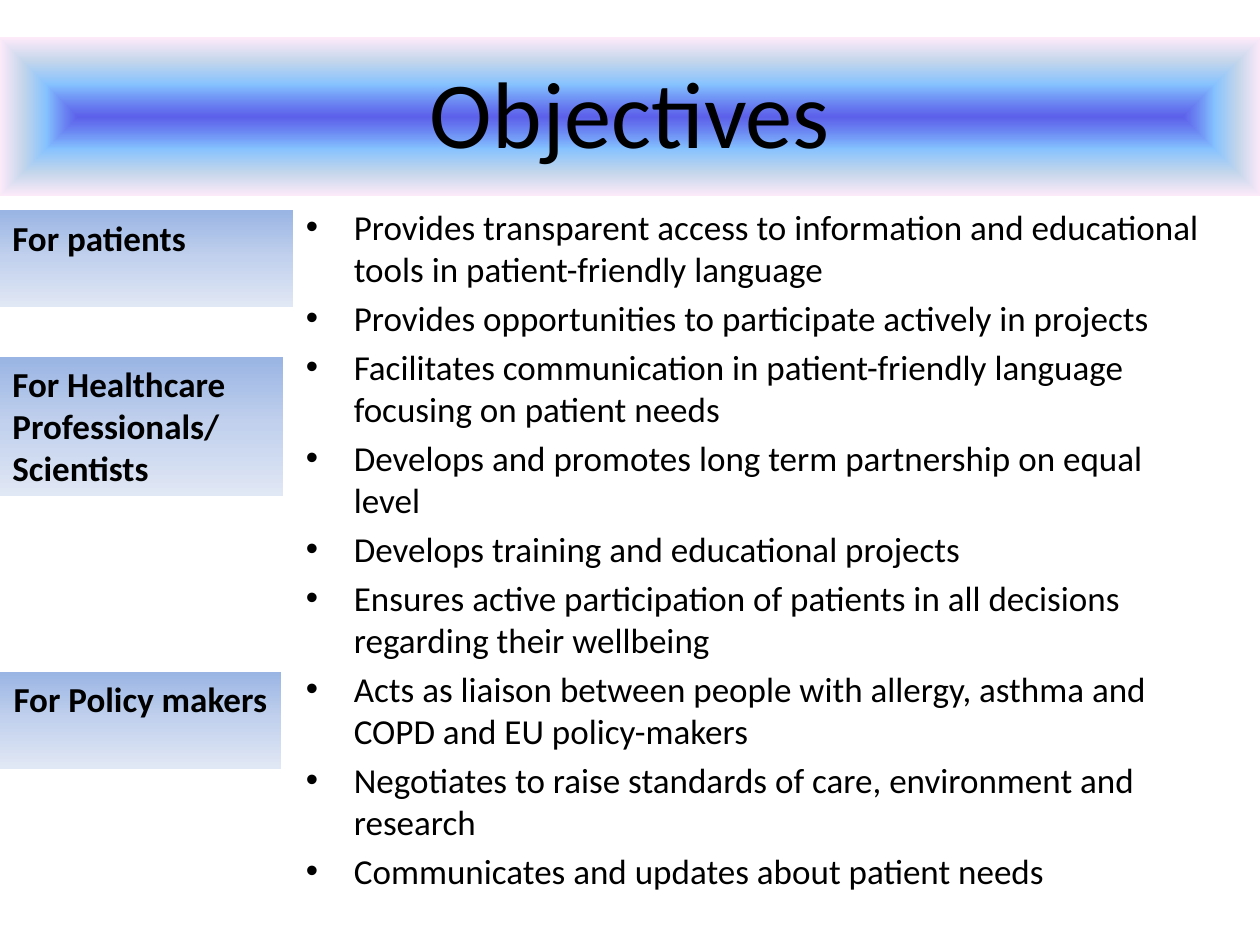
from dataclasses import dataclass

from lxml.etree import SubElement
from pptx import Presentation
from pptx.dml.color import RGBColor
from pptx.enum.shapes import MSO_SHAPE
from pptx.enum.text import MSO_ANCHOR, PP_ALIGN
from pptx.oxml.ns import qn
from pptx.util import Inches, Length, Pt

FONT = "Calibri"
BLACK = RGBColor(0x00, 0x00, 0x00)
INDIGO = RGBColor(0x43, 0x47, 0xE7)
SKY = RGBColor(0x85, 0xC2, 0xFF)
MIST = RGBColor(0xC4, 0xD6, 0xEB)
BLUSH = RGBColor(0xFF, 0xEB, 0xFA)
STEEL = RGBColor(0x9A, 0xB5, 0xE4)
PALE_STEEL = RGBColor(0xC2, 0xD1, 0xED)
ICE = RGBColor(0xE1, 0xE8, 0xF5)


@dataclass(frozen=True)
class Stop:
    percent: int
    color: RGBColor
    opacity: int = 100


@dataclass(frozen=True)
class Audience:
    lines: tuple[str, ...]
    top: float
    width: float
    height: float
    wrap: bool = True
    align: PP_ALIGN = PP_ALIGN.LEFT


BANNER_STOPS = (Stop(0, INDIGO, 86), Stop(40, SKY), Stop(70, MIST), Stop(100, BLUSH))
LABEL_STOPS = (Stop(0, STEEL), Stop(50, PALE_STEEL), Stop(100, ICE))

AUDIENCES = (
    Audience(("For patients",), 1.67, 2.33, 0.77),
    Audience(("For Healthcare", "Professionals/", "Scientists"), 2.83, 2.25, 1.11),
    Audience(("For Policy makers",), 5.33, 2.23, 0.77, False, PP_ALIGN.CENTER),
)

OBJECTIVES = (
    "Provides transparent access to information and educational tools in patient-friendly language",
    "Provides opportunities to participate actively in projects",
    "Facilitates communication in patient-friendly language focusing on patient needs",
    "Develops and promotes long term partnership on equal level",
    "Develops training and educational projects",
    "Ensures active participation of patients in all decisions regarding their wellbeing",
    "Acts as liaison between people with allergy, asthma and COPD and EU policy-makers",
    "Negotiates to raise standards of care, environment and research",
    "Communicates and updates about patient needs",
)


def add_gradient_box(page, top: Length, width: Length, height: Length,
                     stops: tuple[Stop, ...], from_center: bool = False):
    box = page.shapes.add_shape(MSO_SHAPE.RECTANGLE, Inches(0), top, width, height)
    box.shadow.inherit = False
    box.line.fill.background()
    box.fill.gradient()
    gradient = box._element.spPr.find(qn("a:gradFill"))
    for child in list(gradient):
        gradient.remove(child)
    stop_list = SubElement(gradient, qn("a:gsLst"))
    for stop in stops:
        entry = SubElement(stop_list, qn("a:gs"), pos=str(stop.percent * 1000))
        color = SubElement(entry, qn("a:srgbClr"), val=str(stop.color))
        if stop.opacity < 100:
            SubElement(color, qn("a:alpha"), val=str(stop.opacity * 1000))
    if from_center:
        shade = SubElement(gradient, qn("a:path"), path="rect")
        SubElement(shade, qn("a:fillToRect"), l="50000", t="50000", r="50000", b="50000")
    else:
        SubElement(gradient, qn("a:lin"), ang="5400000", scaled="1")
    return box


def write_lines(box, lines: tuple[str, ...], size: int, bold: bool = False,
                align: PP_ALIGN = PP_ALIGN.LEFT) -> None:
    frame = box.text_frame
    frame.text = "\n".join(lines)
    for para in frame.paragraphs:
        para.alignment = align
        for span in para.runs:
            span.font.name = FONT
            span.font.size = Pt(size)
            span.font.bold = bold
            span.font.color.rgb = BLACK


def add_banner(page, title: str) -> None:
    box = add_gradient_box(page, Inches(0.3), Inches(10), Inches(1.25), BANNER_STOPS, True)
    box.text_frame.vertical_anchor = MSO_ANCHOR.MIDDLE
    box.text_frame.margin_bottom = Inches(0.15)
    write_lines(box, (title,), 54, align=PP_ALIGN.CENTER)


def add_objectives(page, objectives: tuple[str, ...]) -> None:
    box = page.shapes.add_textbox(Inches(2.33), Inches(1.58), Inches(7.42), Inches(5.25))
    box.text_frame.word_wrap = True
    write_lines(box, objectives, 20)
    for para in box.text_frame.paragraphs:
        para.space_before = Pt(4)
        properties = para._p.get_or_add_pPr()
        properties.set("marL", str(Inches(0.38)))
        properties.set("indent", str(-Inches(0.38)))
        SubElement(properties, qn("a:buFont"), typeface="Arial")
        SubElement(properties, qn("a:buChar"), char="•")


def add_audience(page, audience: Audience) -> None:
    box = add_gradient_box(page, Inches(audience.top), Inches(audience.width),
                           Inches(audience.height), LABEL_STOPS)
    box.text_frame.vertical_anchor = MSO_ANCHOR.TOP
    box.text_frame.word_wrap = audience.wrap
    write_lines(box, audience.lines, 20, True, audience.align)


def main() -> None:
    deck = Presentation()
    deck.slide_width = Inches(10)
    deck.slide_height = Inches(7.5)
    page = deck.slides.add_slide(deck.slide_layouts[6])
    add_banner(page, "Objectives")
    add_objectives(page, OBJECTIVES)
    for audience in AUDIENCES:
        add_audience(page, audience)
    deck.save("out.pptx")


if __name__ == "__main__":
    main()
